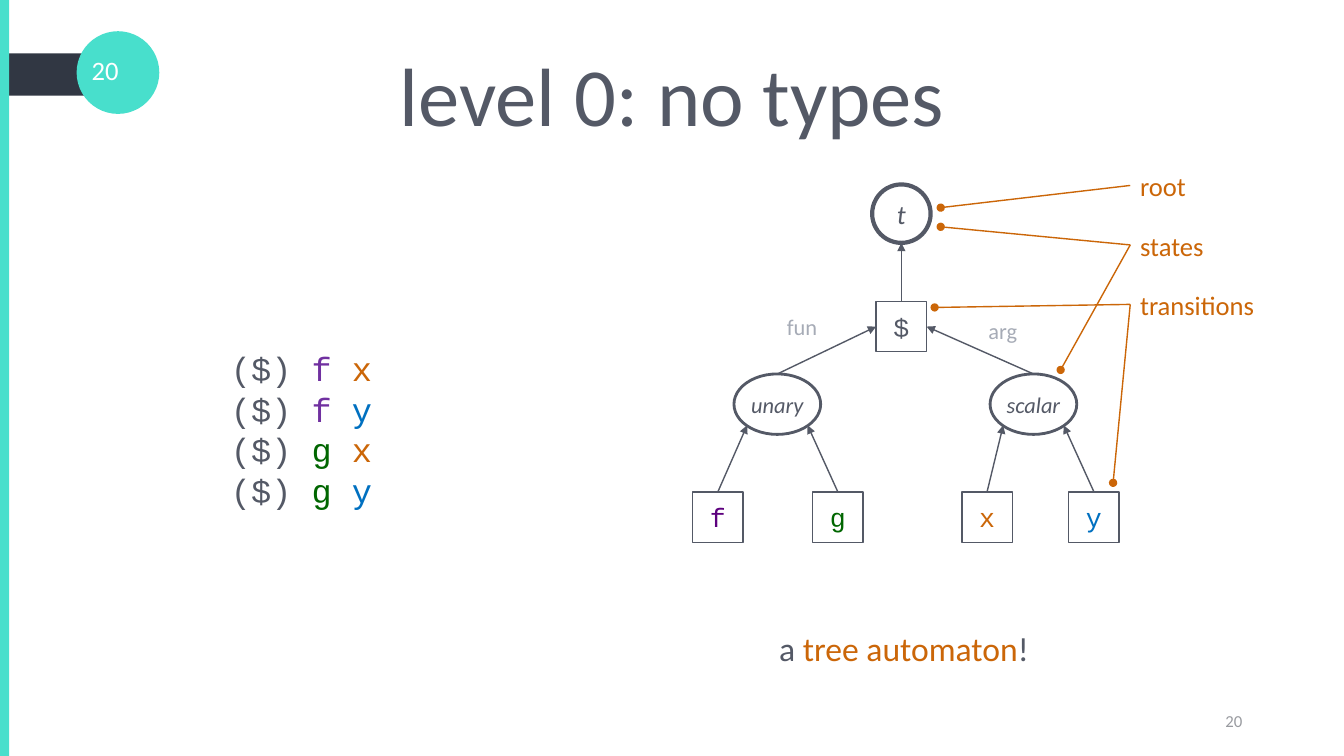
from lxml import etree
from pptx import Presentation
from pptx.dml.color import RGBColor
from pptx.enum.shapes import MSO_CONNECTOR, MSO_SHAPE
from pptx.enum.text import MSO_ANCHOR, PP_ALIGN
from pptx.oxml.ns import qn
from pptx.util import Pt

PX = 9144  # 100 px to the inch
RECT, OVAL = MSO_SHAPE.RECTANGLE, MSO_SHAPE.OVAL
LINE = MSO_CONNECTOR.STRAIGHT
LEFT, MID, RIGHT = PP_ALIGN.LEFT, PP_ALIGN.CENTER, PP_ALIGN.RIGHT
TOP, CENTER = MSO_ANCHOR.TOP, MSO_ANCHOR.MIDDLE
SANS, MONO = "Calibri", "Courier New"
INK, DARK, TEAL, WHITE = "545966", "313743", "48DFCC", "FFFFFF"
ORANGE, BLUE, GREEN = "CB6608", "0070C0", "006600"
PURPLE, PLUM = "7030A0", "5D007E"
PALE, GREY = "A6ABB6", "999BA0"


def color(code):
    return RGBColor.from_string(code)


class Canvas:
    def __init__(self, slide):
        self.shapes = slide.shapes

    def fill(self, frame, lines, size, font=SANS, align=MID, italic=False, pitch=None):
        """Put lines in a frame; each line is a list of (words, colour) runs."""
        frame.word_wrap = True
        for i, line in enumerate(lines):
            para = frame.add_paragraph() if i else frame.paragraphs[0]
            para.alignment = align
            if pitch:
                para.line_spacing = Pt(pitch)
            for words, tint in line:
                run = para.add_run()
                run.text = words
                run.font.name = font
                run.font.size = Pt(size)
                run.font.italic = italic
                run.font.color.rgb = color(tint)

    def text(self, box, lines, size, anchor=TOP, **style):
        frame = self.shapes.add_textbox(*(n * PX for n in box)).text_frame
        frame.vertical_anchor = anchor
        self.fill(frame, lines, size, **style)

    def shape(self, kind, box, fill):
        item = self.shapes.add_shape(kind, *(n * PX for n in box))
        item.shadow.inherit = False
        item.fill.solid()
        item.fill.fore_color.rgb = color(fill)
        item.line.fill.background()
        return item

    def node(self, kind, x, y, wide, high, label, size, tint=INK, line=1, **style):
        """Outlined tree node centred on x, y."""
        box = (x - wide // 2, y - high // 2, wide, high)
        item = self.shape(kind, box, WHITE)
        item.line.color.rgb = color(INK)
        item.line.width = Pt(line)
        frame = item.text_frame
        frame.margin_left = frame.margin_right = 0
        frame.margin_top = frame.margin_bottom = 0
        frame.vertical_anchor = CENTER
        self.fill(frame, [[(label, tint)]], size, **style)
        return item

    def state(self, x, y, wide, high, label, size, line):
        return self.node(OVAL, x, y, wide, high, label, size, line=line, italic=True)

    def symbol(self, x, y, label, tint):
        return self.node(RECT, x, y, 50, 50, label, 19, tint, font=MONO)

    def link(self, start, end, tint=INK, tip="triangle", source=None, target=None):
        """Line with a tip at its end; source and target are (shape, site)."""
        item = self.shapes.add_connector(LINE, *(n * PX for n in start + end))
        if source:
            item.begin_connect(*source)
        if target:
            item.end_connect(*target)
        item.line.color.rgb = color(tint)
        item.line.width = Pt(1)
        props = item._element.spPr
        etree.SubElement(props.find(qn("a:ln")), qn("a:tailEnd"), type=tip)
        etree.SubElement(props, qn("a:effectLst"))


def frame_page(page):
    page.shape(RECT, (1, 53, 110, 42), DARK)
    page.shape(OVAL, (76, 31, 82, 82), TEAL)
    page.shape(RECT, (0, 0, 9, 750), TEAL)
    page.text((81, 49, 88, 40), [[("20", WHITE)]], 19, align=LEFT)
    page.text((67, 30, 1200, 125), [[("level 0: no types", INK)]], 59, CENTER)
    page.text((942, 695, 300, 40), [[("20", GREY)]], 12, CENTER, align=RIGHT)


def draw_tree(page):
    page.state(894, 212, 58, 58, "t", 19, 3)
    apply = page.symbol(894, 324, "$", INK)
    page.link((894, 299), (894, 241), source=(apply, 0))
    branches = [
        (771, "unary", 1, 869, [(712, "f", PLUM), (831, "g", GREEN)]),
        (1025, "scalar", 3, 919, [(979, "x", ORANGE), (1085, "y", BLUE)]),
    ]
    for x, name, site, edge, leaves in branches:
        page.state(x, 401, 86, 60, name, 16, 2)
        page.link((x, 371), (edge, 324), target=(apply, site))
        for side, (at, label, tint) in zip((-30, 30), leaves):
            leaf = page.symbol(at, 513, label, tint)
            page.link((at, 488), (x + side, 422), source=(leaf, 0))
    for x, y, word in [(759, 306, "fun"), (958, 310, "arg")]:
        page.text((x, y, 73, 37), [[(word, PALE)]], 16)


def draw_notes(page):
    notes = [
        ("root", [(933, 206)]),
        ("states", [(933, 225), (1052, 367)]),
        ("transitions", [(927, 305), (1104, 479)]),
    ]
    for i, (word, ends) in enumerate(notes):
        y = 164 + 59 * i
        page.text((1121, y, 181, 40), [[(word, ORANGE)]], 19, align=LEFT)
        for end in ends:
            page.link((1121, y + 20), end, ORANGE, "oval")


def draw_terms(page):
    terms = [
        [("($) ", INK), (fun + " ", hue), (arg, tint)]
        for fun, hue in [("f", PURPLE), ("g", GREEN)]
        for arg, tint in [("x", ORANGE), ("y", BLUE)]
    ]
    page.text((110, 340, 378, 172), terms, 24, font=MONO, pitch=29)
    claim = [("a ", INK), ("tree automaton", ORANGE), ("!", INK)]
    page.text((763, 618, 328, 50), [claim], 24, align=LEFT)


def main():
    deck = Presentation()
    deck.slide_width, deck.slide_height = 1333 * PX, 750 * PX
    page = Canvas(deck.slides.add_slide(deck.slide_layouts[6]))
    frame_page(page)
    draw_tree(page)
    draw_terms(page)
    draw_notes(page)
    deck.save("out.pptx")


if __name__ == "__main__":
    main()
